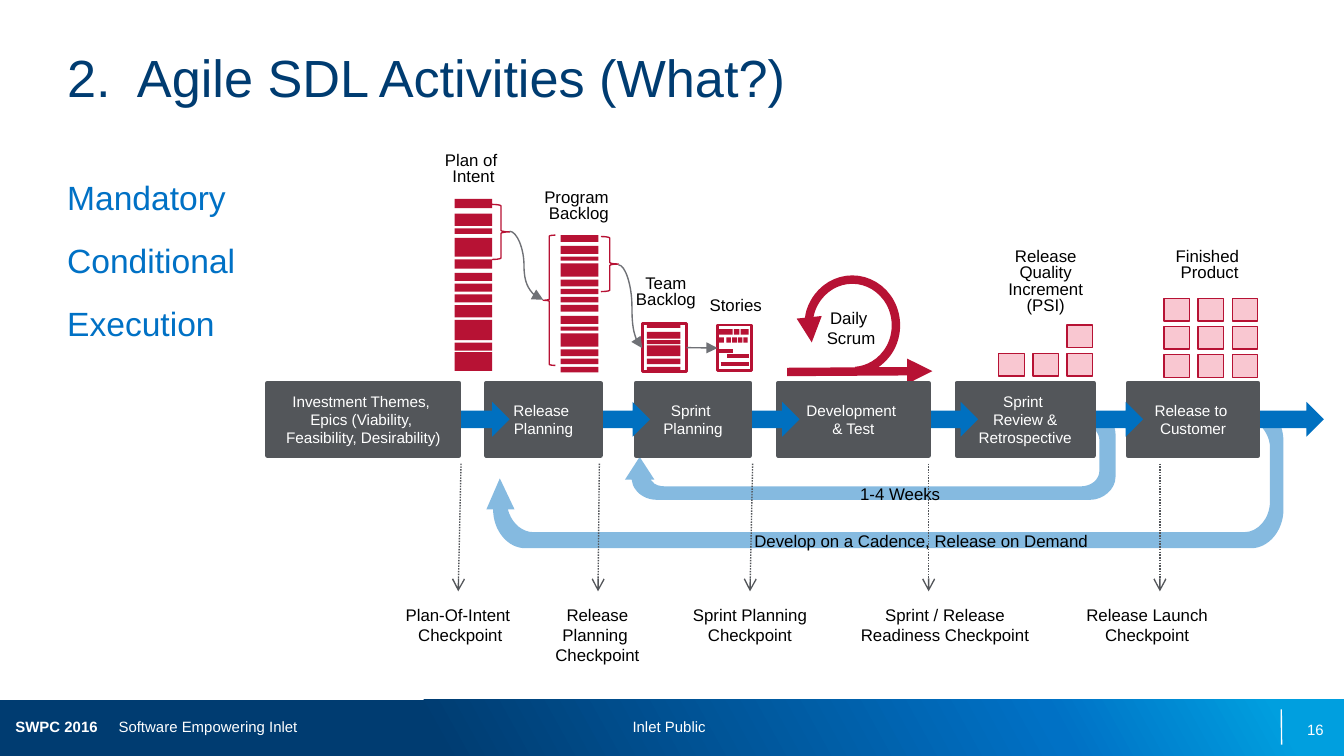
from copy import deepcopy
from lxml.etree import SubElement
from pptx import Presentation
from pptx.dml.color import RGBColor
from pptx.enum.dml import MSO_LINE
from pptx.enum.shapes import MSO_CONNECTOR as LINK, MSO_SHAPE as KIND
from pptx.enum.text import MSO_ANCHOR, MSO_AUTO_SIZE, PP_ALIGN
from pptx.oxml.ns import qn
from pptx.util import Pt

RED, PINK, BLUE, SLATE, GREY = "B71234", "F9C7D1", "0070C0", "53565A", "6F7176"
WHITE, BLACK, NAVY = "FFFFFF", "000000", "003C71"


def hue(code):
    """Turn a hex string into a colour."""
    return RGBColor.from_string(code)


def write(frame, text, size=9, color=BLACK, align=PP_ALIGN.CENTER, wrap=False,
          anchor=MSO_ANCHOR.TOP, inset=None, space=None, tab=None, gap=0):
    """Fill a text frame with evenly styled paragraphs."""
    frame.auto_size = MSO_AUTO_SIZE.NONE
    frame.word_wrap, frame.vertical_anchor = wrap, anchor
    if inset is not None:
        frame.margin_left = frame.margin_right = Pt(inset)
        frame.margin_top = frame.margin_bottom = Pt(inset)
    frame.text = text
    for i, para in enumerate(frame.paragraphs):
        if tab:
            tabs = SubElement(para._p.get_or_add_pPr(), qn("a:tabLst"))
            SubElement(tabs, qn("a:tab"), pos=str(Pt(tab)), algn="l")
        para.alignment = align
        para.space_before = Pt(gap if i else 0)
        if space:
            para.line_spacing = space
        para.font.name, para.font.size = "Arial", Pt(size)
        para.font.color.rgb = hue(color)


def label(tree, text, x, y, w, h, **style):
    """Add a text box."""
    box = tree.add_textbox(Pt(x), Pt(y), Pt(w), Pt(h))
    write(box.text_frame, text, **style)
    return box


def shape(tree, kind, x, y, w, h, fill=None, line=None, width=0.75):
    """Add a flat preset shape."""
    part = tree.add_shape(kind, Pt(x), Pt(y), Pt(w), Pt(h))
    part.shadow.inherit = False
    if fill:
        part.fill.solid()
        part.fill.fore_color.rgb = hue(fill)
    else:
        part.fill.background()
    if line:
        part.line.color.rgb, part.line.width = hue(line), Pt(width)
    else:
        part.line.fill.background()
    return part


def link(tree, x1, y1, x2, y2, color, width=0.75, tail=None, bend=None):
    """Add a straight line, or a curve when a bend is given."""
    kind = LINK.CURVE if bend else LINK.STRAIGHT
    wire = tree.add_connector(kind, Pt(x1), Pt(y1), Pt(x2), Pt(y2))
    wire.line.color.rgb, wire.line.width = hue(color), Pt(width)
    props = wire._element.spPr
    SubElement(props, qn("a:effectLst"))
    if tail:
        SubElement(wire.line._get_or_add_ln(), qn("a:tailEnd"), type=tail)
    if bend:
        guides = props.find(qn("a:prstGeom")).get_or_add_avLst()
        SubElement(guides, qn("a:gd"), name="adj1", fmla=f"val {bend}")
    return wire


def footer(tree, x, y, w, h):
    """Draw the gradient band with its captions."""
    band = shape(tree, KIND.RECTANGLE, x, y, w, h, fill=NAVY)
    band.fill.gradient()
    band.fill.gradient_angle = 29
    stops = band._element.spPr.find(".//" + qn("a:gsLst"))
    stops.append(deepcopy(stops[0]))
    tones = [(0.32, NAVY), (0.78, "0071C5"), (0.95, "009FDF")]
    for stop, (place, tone) in zip(band.fill.gradient_stops, tones):
        stop.position, stop.color.rgb = place, hue(tone)
    link(tree, x + 686.4, y + 5, x + 686.6, y + 24, WHITE)
    look = dict(size=8, color=WHITE, anchor=MSO_ANCHOR.MIDDLE, inset=0, wrap=True)
    left = label(tree, "SWPC 2016", x + 8.2, y + 3.7, 168, 21.6,
                 align=PP_ALIGN.LEFT, tab=55.3, **look)
    para = left.text_frame.paragraphs[0]
    para.runs[0].font.bold = True
    para.add_run().text = "\tSoftware Empowering Inlet"
    label(tree, "Inlet Public", x + 274.5, y + 3.7, 168, 21.6, **look)
    label(tree, "16", x + 541.2, y + 5.2, 168, 21.6, align=PP_ALIGN.RIGHT, **look)


def loop(tree, x, y, path):
    """Draw a translucent return arrow; six numbers make a curve."""
    spots = [(Pt(x + step[i]), Pt(y + step[i + 1]))
             for step in path for i in range(0, len(step), 2)]
    pen = tree.build_freeform(*spots[0])
    pen.add_line_segments(spots[1:], close=True)
    part = pen.convert_to_shape()
    sides = iter(part._element.spPr.findall(".//" + qn("a:lnTo")))
    for step in path[1:]:
        side = next(sides)
        if len(step) == 6:
            side.addprevious(side.makeelement(qn("a:cubicBezTo")))
            curve = side.getprevious()
            for old in (side, next(sides), next(sides)):
                curve.append(old[0])
                old.getparent().remove(old)
    part.shadow.inherit = False
    part.fill.solid()
    part.fill.fore_color.rgb = hue(BLUE)
    part.line.fill.background()
    SubElement(part._element.spPr.find(".//" + qn("a:srgbClr")), qn("a:alpha"), val="48000")


def stack(tree, x, y, w, bars):
    """Pile bars given as offset and height."""
    for dy, h in bars:
        shape(tree, KIND.RECTANGLE, x, y + dy, w, h, fill=RED)


def backlog(tree, x, y):
    """Draw the plan, backlogs and stories with their links."""
    stack(tree, x, y + 28.1, 20.2, [
        (0, 5), (7.9, 6.5), (15.8, 2.9), (20.9, 10.1), (32.4, 5), (39.6, 4.3), (45.4, 4.3),
        (51.1, 4.3), (56.9, 6.5), (64.8, 10.8), (77, 4.3), (82.1, 10.1)])
    stack(tree, x + 56.9, y + 47.5, 20.2, [
        (0, 3.6), (5.8, 4.3), (11.5, 2.2), (15.1, 7.2), (23.8, 3.6), (28.8, 2.9), (33.1, 2.9),
        (37.4, 3.6), (43.2, 4.3), (49, 2.2), (52.6, 7.2), (61.2, 3.6), (66.2, 2.9), (70.6, 2.9)])
    stack(tree, x + 103, y + 94.3, 18, [
        (0, 2.9), (5, 3.6), (9.4, 2.2), (12.2, 5.8), (19.4, 2.9), (23.8, 2.2)])
    label(tree, "Plan of \vIntent", x - 15.8, y, 51.8, 30.2, space=0.8)
    label(tree, "Program \nBacklog", x + 36.7, y + 20.2, 59.8, 30.2, space=0.8)
    label(tree, "Team\nBacklog", x + 86.2, y + 66.3, 54, 30.2, space=0.8)
    label(tree, "Stories", x + 125.8, y + 76, 49.7, 22.3)
    team = shape(tree, KIND.RECTANGLE, x + 100.5, y + 94.8, 23.8, 25.9, line=RED, width=1.5)
    story = shape(tree, KIND.RECTANGLE, x + 140.9, y + 95.7, 18, 24.5, line=RED, width=1.5)
    wire = link(tree, x + 124.3, y + 108, x + 140.9, y + 108, GREY, tail="triangle")
    wire.begin_connect(team, 3)
    wire.end_connect(story, 1)
    rows = [(97.9, [(0, 7.2), (7.9, 2.9), (11.5, 4.3)]),
            (102.2, [(0, 2.5), (3.8, 2.5), (7, 2.5), (10, 2.5), (13, 2.2)])]
    for dy, marks in rows:
        for dx, w in marks:
            shape(tree, KIND.RECTANGLE, x + 141.8 + dx, y + dy, w, 2.9, fill=RED)
    for dx, dy, w in [(0, 109.4, 7.2), (4.3, 112.3, 11.5), (0.7, 116.6, 15.1)]:
        left = x + 141.8 + dx
        link(tree, left, y + dy, left + w, y + dy, RED, width=2)
    for kind, dx, dy, w, h in [(KIND.RIGHT_BRACE, 20.2, 31, 9.4, 29.5),
                               (KIND.LEFT_BRACE, 47.5, 47.5, 6.5, 69.8),
                               (KIND.RIGHT_BRACE, 78.5, 48.2, 9.4, 29.5)]:
        shape(tree, kind, x + dx, y + dy, w, h, line=RED)
    link(tree, x + 29.5, y + 45.4, x + 47.5, y + 82.1, GREY, tail="triangle", bend=42900)
    link(tree, x + 87.9, y + 63.4, x + 100.5, y + 108, GREY, tail="triangle", bend=56700)


def scrum(tree, x, y):
    """Draw the daily scrum loop."""
    ring = shape(tree, KIND.ARC, x + 11.5, y, 46.8, 49, line=RED, width=4.5)
    ring.adjustments[0], ring.adjustments[1] = 94.301, 51.535
    SubElement(ring.line._get_or_add_ln(), qn("a:headEnd"), type="triangle")
    link(tree, x, y + 49.5, x + 77.8, y + 49, RED, width=4.5, tail="triangle")
    label(tree, "Daily \vScrum", x + 10.8, y + 11.5, 46.8, 36)


def tiles(tree, x, y, cells):
    """Lay small tiles on a grid of columns and rows."""
    for col, row in cells:
        shape(tree, KIND.RECTANGLE, x + col * 18.3, y + row * 15.1, 13.7, 12.2, PINK, RED)


def flow(tree, x, y, h, steps):
    """Draw the process boxes, each with an arrow to the next."""
    for dx, w, reach, text in reversed(steps):
        shape(tree, KIND.RIGHT_ARROW, x + dx + w, y + 10.1, reach, 18.7, fill=BLUE)
        box = shape(tree, KIND.RECTANGLE, x + dx, y, w, h, SLATE, SLATE, 2.25)
        write(box.text_frame, text, 8.2, WHITE, anchor=MSO_ANCHOR.MIDDLE)


def checks(tree, y, marks):
    """Draw dotted arrows down to the checkpoint labels."""
    for top, end, x, w, wrap, text in marks:
        wire = link(tree, top, y, end, y + 68.4, SLATE)
        wire.line.dash_style = MSO_LINE.ROUND_DOT
        SubElement(wire.line._get_or_add_ln(), qn("a:tailEnd"), type="arrow")
        label(tree, text, x, y + 71.8, w, 36, wrap=wrap)


def main():
    """Build and save the slide."""
    deck = Presentation()
    deck.slide_width, deck.slide_height = Pt(720), Pt(405)
    slide = deck.slides.add_slide(deck.slide_layouts[5])
    tree, title = slide.shapes, slide.shapes.title
    footer(tree, 0, 375, 720, 30)
    title.left, title.top, title.width, title.height = Pt(36), Pt(24.5), Pt(648), Pt(68.4)
    write(title.text_frame, "2.\tAgile SDL Activities (What?)", 28, NAVY,
          PP_ALIGN.LEFT, True, inset=0, tab=37.4)
    label(tree, "Mandatory\nConditional\nExecution", 36, 95, 213.8, 270, size=18,
          color="0071C5", align=PP_ALIGN.LEFT, wrap=True, inset=0, gap=12)
    loop(tree, 334.8, 220.3, [
        (251.3, 0), (252, 0), (258.5, 1.4, 262.8, 6.5, 262.8, 12.2), (262.8, 35.3),
        (262.8, 41.8, 256.3, 47.5, 249.1, 47.5), (17.3, 47.5),
        (11.5, 47.5, 6.5, 44.6, 4.3, 39.6), (3.6, 36.7), (0, 36.7), (7.9, 24.5),
        (15.8, 36.7), (13.7, 36.7), (14.4, 37.4), (15.8, 39.6, 18.7, 40.3, 21.6, 40.3),
        (244.1, 40.3), (249.8, 40.3, 254.2, 36.7, 254.2, 31.7), (254.2, 15.8),
        (254.2, 13.7, 253.4, 11.5, 251.3, 9.4)])
    loop(tree, 260.6, 220.3, [
        (412.6, 0), (420.5, 0), (421.9, 1.4), (425.5, 5.8, 427, 10.8, 427, 16.6),
        (427, 52.6), (427, 64.1, 419, 73.4, 409.7, 73.4), (20.9, 73.4),
        (11.5, 73.4, 3.6, 64.1, 3.6, 52.6), (0, 52.6), (7.2, 36), (15.1, 52.6),
        (11.5, 52.6), (12.2, 54.7), (14.4, 60.5, 19.4, 64.8, 25.2, 64.8), (406.1, 64.8),
        (413.3, 64.8, 419.8, 57.6, 419.8, 48.2), (419.8, 19.4),
        (419.8, 14.4, 416.9, 9.4, 413.3, 6.5), (412.6, 5.8)])
    backlog(tree, 243.5, 78.5)
    scrum(tree, 421.7, 149.8)
    tiles(tree, 535, 174.2, [(0, 1), (1, 1), (2, 1), (2, 0)])
    tiles(tree, 623.5, 159.8, [(col, row) for row in range(3) for col in range(3)])
    label(tree, "Release\vQuality\nIncrement\n(PSI)", 527.8, 130.3, 64.8, 51.8, space=0.8)
    label(tree, "Finished \vProduct", 618.5, 130.3, 59, 30.2, space=0.8)
    flow(tree, 143.3, 205.2, 38.9, [
        (0, 102.7, 27, "Investment Themes, \nEpics (Viability, \nFeasibility, Desirability)"),
        (117.2, 61.2, 26.5, "Release \nPlanning"),
        (197.3, 61.2, 26.5, "Sprint \nPlanning"),
        (273.6, 80.6, 26.5, "Development \n& Test"),
        (369.2, 73.4, 26.5, "Sprint \nReview &\nRetrospective"),
        (461, 69.8, 35.1, "Release to \vCustomer")])
    label(tree, "Develop on a Cadence, Release on Demand", 347.6, 279.4, 291.6, 20.2,
          anchor=MSO_ANCHOR.MIDDLE)
    label(tree, "1-4 Weeks", 448.4, 253.4, 67.7, 22.3, anchor=MSO_ANCHOR.MIDDLE)
    checks(tree, 248.4, [
        (247, 245.5, 203, 87.1, False, "Plan-Of-Intent \vCheckpoint"),
        (321.1, 320.4, 282.2, 75.6, True, "Release Planning \vCheckpoint"),
        (403.2, 401.8, 357.1, 89.3, False, "Sprint Planning\vCheckpoint"),
        (497.5, 497.5, 445.7, 121, True, "Sprint / Release Readiness Checkpoint"),
        (621.4, 621.4, 569.5, 90, False, "Release Launch\vCheckpoint")])
    deck.save("out.pptx")


if __name__ == "__main__":
    main()
